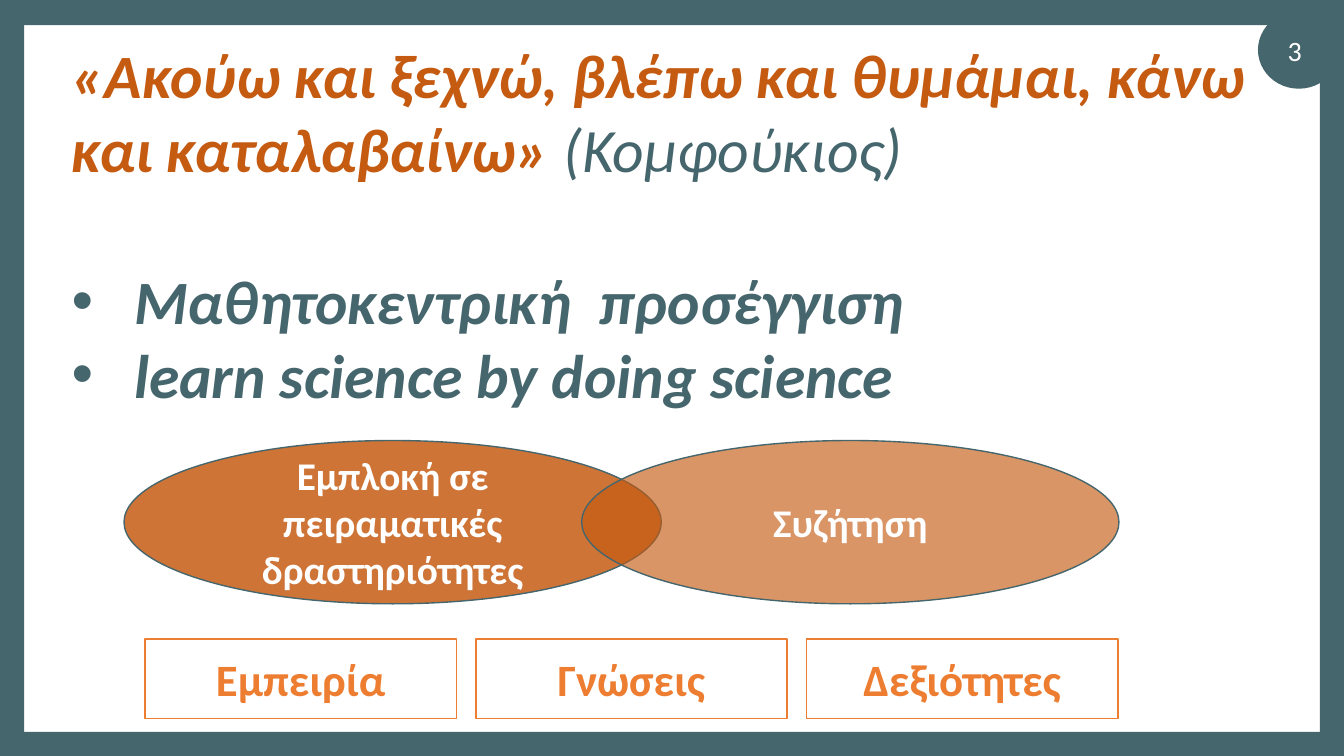
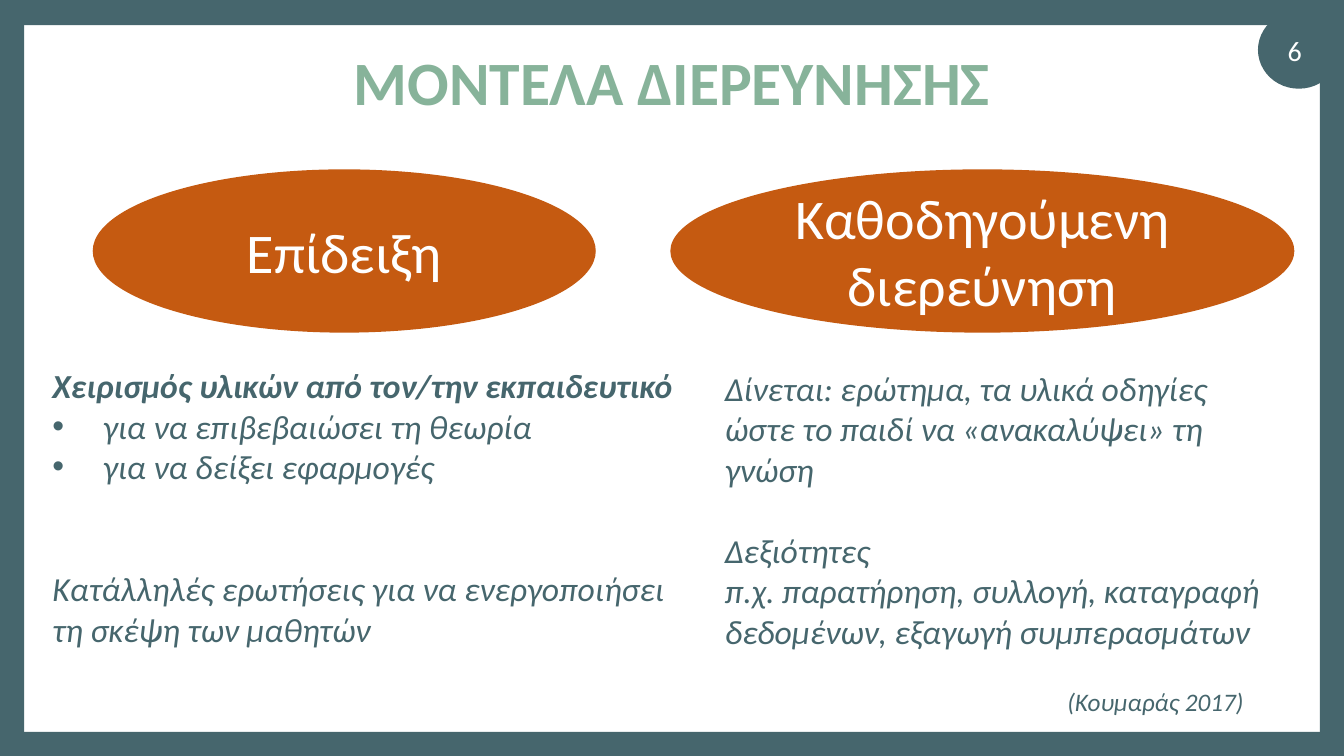
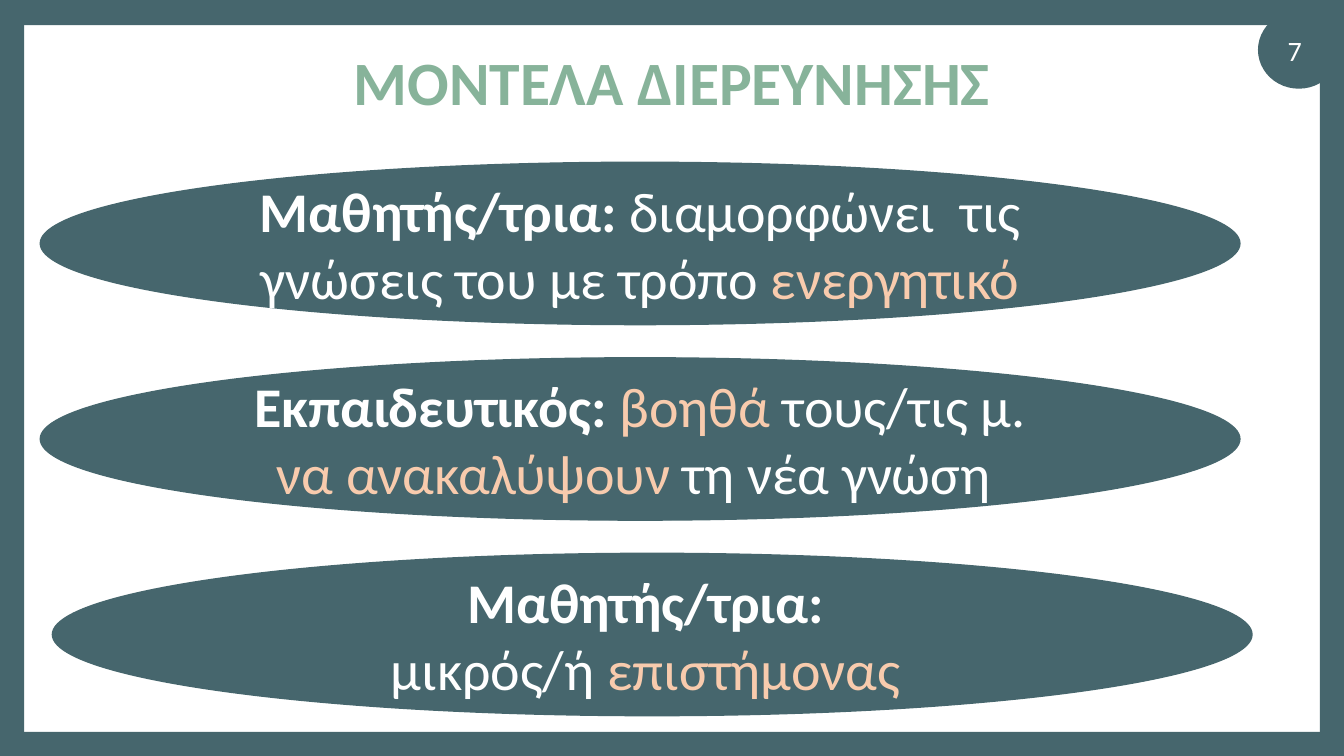
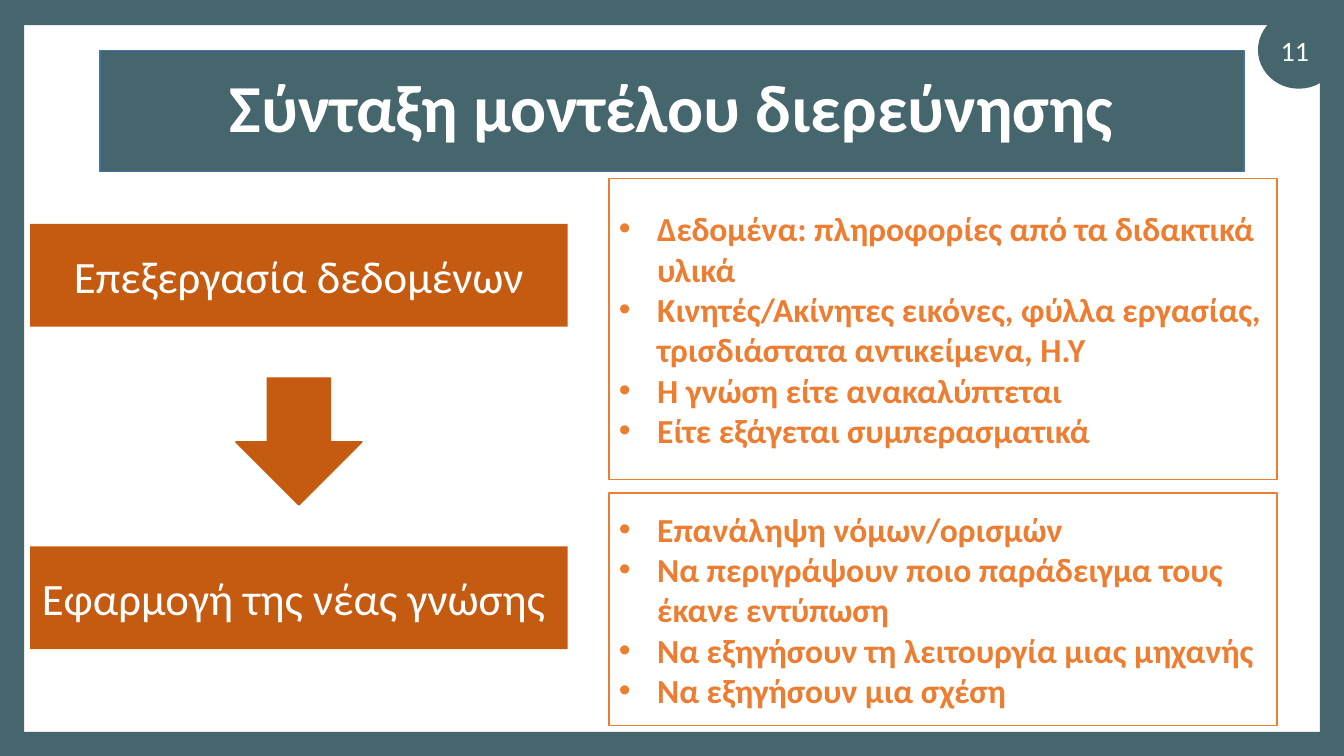
from dataclasses import dataclass

from lxml import etree
from pptx import Presentation
from pptx.dml.color import RGBColor
from pptx.enum.shapes import MSO_SHAPE
from pptx.enum.text import MSO_ANCHOR, MSO_AUTO_SIZE, PP_ALIGN
from pptx.oxml.ns import qn
from pptx.util import Inches, Pt

RECT, OVAL, DOWN = MSO_SHAPE.RECTANGLE, MSO_SHAPE.OVAL, MSO_SHAPE.DOWN_ARROW
CENTER, LEFT = PP_ALIGN.CENTER, PP_ALIGN.LEFT
MIDDLE, TOP = MSO_ANCHOR.MIDDLE, MSO_ANCHOR.TOP
NO_FIT = MSO_AUTO_SIZE.NONE

WIDTH, HEIGHT = Inches(13.333), Inches(7.5)
FONT = "Calibri"
TEAL, GREEN, WHITE = "46666D", "87B39A", "FFFFFF"
RUST, ORANGE, PEACH, BLUE = "C55A11", "ED7D31", "F8CBAD", "43739E"
TITLE_AND_LIST, TWO_LISTS, TITLE_ONLY = 1, 3, 5


@dataclass
class Box:
    x: float
    y: float
    w: float
    h: float

    def area(self, x, y, w, h):
        return Box(self.x + x * self.w, self.y + y * self.h, w * self.w, h * self.h)

    def columns(self, count, gap):
        size = (1 - gap * (count - 1)) / count
        return [self.area(i * (size + gap), 0, size, 1) for i in range(count)]

    def rows(self, count, gap):
        size = (1 - gap * (count - 1)) / count
        return [self.area(0, i * (size + gap), 1, size) for i in range(count)]

    def emu(self):
        return (round(self.x * WIDTH / 100), round(self.y * HEIGHT / 100),
                round(self.w * WIDTH / 100), round(self.h * HEIGHT / 100))


@dataclass
class Para:
    runs: list
    indent: float = 0
    before: float = 0
    bold: bool = None


def rgb(value):
    return RGBColor.from_string(value)


def set_bullet(paragraph, indent):
    props = paragraph._p.get_or_add_pPr()
    props.set("marL", str(Inches(indent)))
    props.set("indent", str(-Inches(indent)))
    if indent:
        marks = [etree.Element(qn("a:buFont"), typeface="Arial"),
                 etree.Element(qn("a:buChar"), char="•")]
    else:
        marks = [etree.Element(qn("a:buNone"))]
    default_font = props.find(qn("a:defRPr"))
    for mark in marks:
        default_font.addprevious(mark)


def write(shape, paras, size, color, bold=False, italic=False, align=CENTER,
          anchor=MIDDLE, line=1.0):
    frame = shape.text_frame
    frame.word_wrap = True
    frame.auto_size = NO_FIT
    frame.vertical_anchor = anchor
    if isinstance(paras, str):
        paras = [Para([paras])]
    for number, para in enumerate(paras):
        paragraph = frame.add_paragraph() if number else frame.paragraphs[0]
        paragraph.alignment = align
        paragraph.line_spacing = line
        paragraph.space_before = Pt(para.before)
        font = paragraph.font
        font.name, font.size = FONT, Pt(size)
        font.bold = bold if para.bold is None else para.bold
        font.italic = italic
        font.color.rgb = rgb(color)
        set_bullet(paragraph, para.indent)
        for piece in para.runs:
            text, run_color, run_bold = (piece, None, None) if isinstance(piece, str) else piece
            run = paragraph.add_run()
            run.text = text
            if run_color:
                run.font.color.rgb = rgb(run_color)
            if run_bold is not None:
                run.font.bold = run_bold


def paint(shape, fill=None, line=None, alpha=None):
    if fill:
        shape.fill.solid()
        shape.fill.fore_color.rgb = rgb(fill)
    else:
        shape.fill.background()
    if line:
        shape.line.color.rgb = rgb(line)
        shape.line.width = Pt(1)
    else:
        shape.line.fill.background()
    if alpha:
        color = shape.element.spPr.find(qn("a:solidFill"))[0]
        etree.SubElement(color, qn("a:alpha"), val=str(alpha * 1000))


def add_figure(slide, kind, box, fill=None, line=None, alpha=None):
    figure = slide.shapes.add_shape(kind, *box.emu())
    figure.shadow.inherit = False
    paint(figure, fill, line, alpha)
    return figure


def add_label(slide, box, text, size, color, **style):
    label = slide.shapes.add_textbox(*box.emu())
    write(label, text, size, color, **style)


def fill_placeholder(slide, index, box, paras, size, color, **style):
    holder = slide.placeholders[index]
    holder.left, holder.top, holder.width, holder.height = box.emu()
    write(holder, paras, size, color, **style)
    return holder


def add_frame(prs, slide):
    tree = prs.slide_master.element.cSld.spTree
    bands = [(OVAL, Box(93.6, 1.47, 6.08, 10.27)),
             (RECT, Box(0, 0, 100, 3.33)), (RECT, Box(0, 96.8, 100, 3.2)),
             (RECT, Box(0, 0, 1.8, 100)), (RECT, Box(98.2, 0, 1.8, 100))]
    for number, (kind, box) in enumerate(bands, 101):
        band = add_figure(slide, kind, box, TEAL).element
        band.nvSpPr.cNvPr.set("id", str(number))
        tree.append(band)


def new_slide(prs, layout, number):
    slide = prs.slides.add_slide(prs.slide_layouts[layout])
    if len(prs.slides) == 1:
        add_frame(prs, slide)
    add_label(slide, Box(93.3, 4, 6.08, 5.33), number, 20, WHITE)
    return slide


def add_model_title(slide):
    fill_placeholder(slide, 0, Box(6.9, 5.33, 86.25, 11.87), "ΜΟΝΤΕΛΑ ΔΙΕΡΕΥΝΗΣΗΣ",
                     44, GREEN, bold=True, line=0.9)


def add_quote(slide, box):
    quote = [Para([("«Ακούω και ξεχνώ, βλέπω και θυμάμαι, κάνω και καταλαβαίνω» ", RUST, True),
                   "(Κομφούκιος)"])]
    fill_placeholder(slide, 0, box.area(0, 0, 1, 0.42), quote, 44, TEAL,
                     italic=True, align=LEFT, anchor=TOP)
    principles = [Para([text], 0.62) for text in
                  ("Μαθητοκεντρική  προσέγγιση", "learn science by doing science")]
    fill_placeholder(slide, 1, box.area(0, 0.58, 1, 0.42), principles, 44, TEAL,
                     bold=True, italic=True, align=LEFT, anchor=TOP)


def add_overlap(slide, box):
    width = 0.54
    activities = [(0, 84, "Εμπλοκή σε πειραματικές δραστηριότητες"),
                  (1 - width, 64, "Συζήτηση")]
    for x, alpha, text in activities:
        activity = add_figure(slide, OVAL, box.area(x, 0, width, 1), RUST, TEAL, alpha)
        write(activity, text, 28, WHITE, bold=True)


def add_outcomes(slide, box):
    for cell, text in zip(box.columns(3, 0.02), ("Εμπειρία", "Γνώσεις", "Δεξιότητες")):
        write(add_figure(slide, RECT, cell, line=ORANGE), text, 32, ORANGE, bold=True)


def add_model(slide, index, heading_box, heading, body_box, body):
    write(add_figure(slide, OVAL, heading_box, RUST), heading, 40, WHITE)
    fill_placeholder(slide, index, body_box, body, 24, TEAL, italic=True, align=LEFT)


def add_roles(slide, box, roles):
    width = 0.99
    for number, (row, role) in enumerate(zip(box.rows(len(roles), 0.06), roles)):
        x = 1 - width if number == len(roles) - 1 else 0
        write(add_figure(slide, OVAL, row.area(x, 0, width, 1), TEAL, TEAL), role, 40, WHITE)


def add_step(slide, index, name_box, name, detail_box, details):
    write(add_figure(slide, RECT, name_box, RUST), name, 32, WHITE)
    holder = fill_placeholder(slide, index, detail_box, [Para([text], 0.38) for text in details],
                              24, ORANGE, bold=True, align=LEFT)
    paint(holder, line=ORANGE)


def build_quote_slide(prs):
    slide = new_slide(prs, TITLE_AND_LIST, "3")
    add_quote(slide, Box(4.58, 4.27, 90.9, 51.4))
    add_overlap(slide, Box(9.23, 58.27, 74.03, 21.6))
    add_outcomes(slide, Box(10.8, 84.53, 72.38, 10.53))


def build_models_slide(prs):
    slide = new_slide(prs, TWO_LISTS, "6")
    add_model_title(slide)
    demonstration = [
        Para(["Χειρισμός υλικών από τον/την εκπαιδευτικό"], bold=True),
        Para(["για να επιβεβαιώσει τη θεωρία"], 0.5),
        Para(["για να δείξει εφαρμογές"], 0.5),
        Para(["Κατάλληλές ερωτήσεις για να ενεργοποιήσει τη σκέψη των μαθητών"], before=58.6)]
    guided = [
        Para(["Δίνεται: ερώτημα, τα υλικά οδηγίες"]),
        Para(["ώστε το παιδί να «ανακαλύψει» τη γνώση"]),
        Para(["Δεξιότητες"], before=29.3),
        Para(["π.χ. παρατήρηση, συλλογή, καταγραφή δεδομένων, εξαγωγή συμπερασμάτων"])]
    add_model(slide, 1, Box(6.9, 22.4, 37.43, 21.6), "Επίδειξη",
              Box(3.15, 46.67, 48.23, 40.8), demonstration)
    add_model(slide, 2, Box(49.88, 22.4, 46.43, 21.6), "Καθοδηγούμενη διερεύνηση",
              Box(53.18, 46.53, 43.13, 41.73), guided)
    add_label(slide, Box(78.68, 89.33, 16.28, 6.8), "(Κουμαράς 2017)", 18, TEAL,
              italic=True, align=LEFT)


def build_roles_slide(prs):
    slide = new_slide(prs, TITLE_ONLY, "7")
    add_model_title(slide)
    roles = [
        [Para([("Μαθητής/τρια: ", None, True), "διαμορφώνει  τις γνώσεις του με τρόπο ",
               ("ενεργητικό", PEACH, None)])],
        [Para([("Εκπαιδευτικός: ", None, True), ("βοηθά", PEACH, None), " τους/τις μ. ",
               ("να ανακαλύψουν ", PEACH, None), "τη νέα γνώση "])],
        [Para(["Μαθητής/τρια: "], bold=True),
         Para(["μικρός/ή ", ("επιστήμονας ", PEACH, None)])]]
    add_roles(slide, Box(3, 21.47, 90.16, 73.2), roles)


def build_syntax_slide(prs):
    slide = new_slide(prs, TWO_LISTS, "11")
    title = fill_placeholder(slide, 0, Box(7.43, 6.67, 85.13, 16),
                             [Para(["Σύνταξη μοντέλου διερεύνησης"], before=10)],
                             48, WHITE, bold=True, line=0.9)
    paint(title, TEAL, BLUE)
    add_step(slide, 1, Box(2.25, 29.6, 39.98, 13.6), "Επεξεργασία δεδομένων",
             Box(45.3, 23.6, 49.73, 39.87),
             ["Δεδομένα: πληροφορίες από τα διδακτικά υλικά",
              "Κινητές/Ακίνητες εικόνες, φύλλα εργασίας, τρισδιάστατα αντικείμενα, Η.Υ",
              "Η γνώση είτε ανακαλύπτεται",
              "Είτε εξάγεται συμπερασματικά"])
    add_figure(slide, DOWN, Box(17.55, 50, 9.38, 16.8), RUST, RUST)
    add_step(slide, 2, Box(2.25, 72.27, 39.98, 13.6), "Εφαρμογή της νέας γνώσης ",
             Box(45.3, 65.2, 49.73, 30.8),
             ["Επανάληψη νόμων/ορισμών",
              "Να περιγράψουν ποιο παράδειγμα τους έκανε εντύπωση",
              "Να εξηγήσουν τη λειτουργία μιας μηχανής",
              "Να εξηγήσουν μια σχέση"])


def main():
    prs = Presentation()
    prs.slide_width, prs.slide_height = WIDTH, HEIGHT
    build_quote_slide(prs)
    build_models_slide(prs)
    build_roles_slide(prs)
    build_syntax_slide(prs)
    prs.save("out.pptx")


if __name__ == "__main__":
    main()
